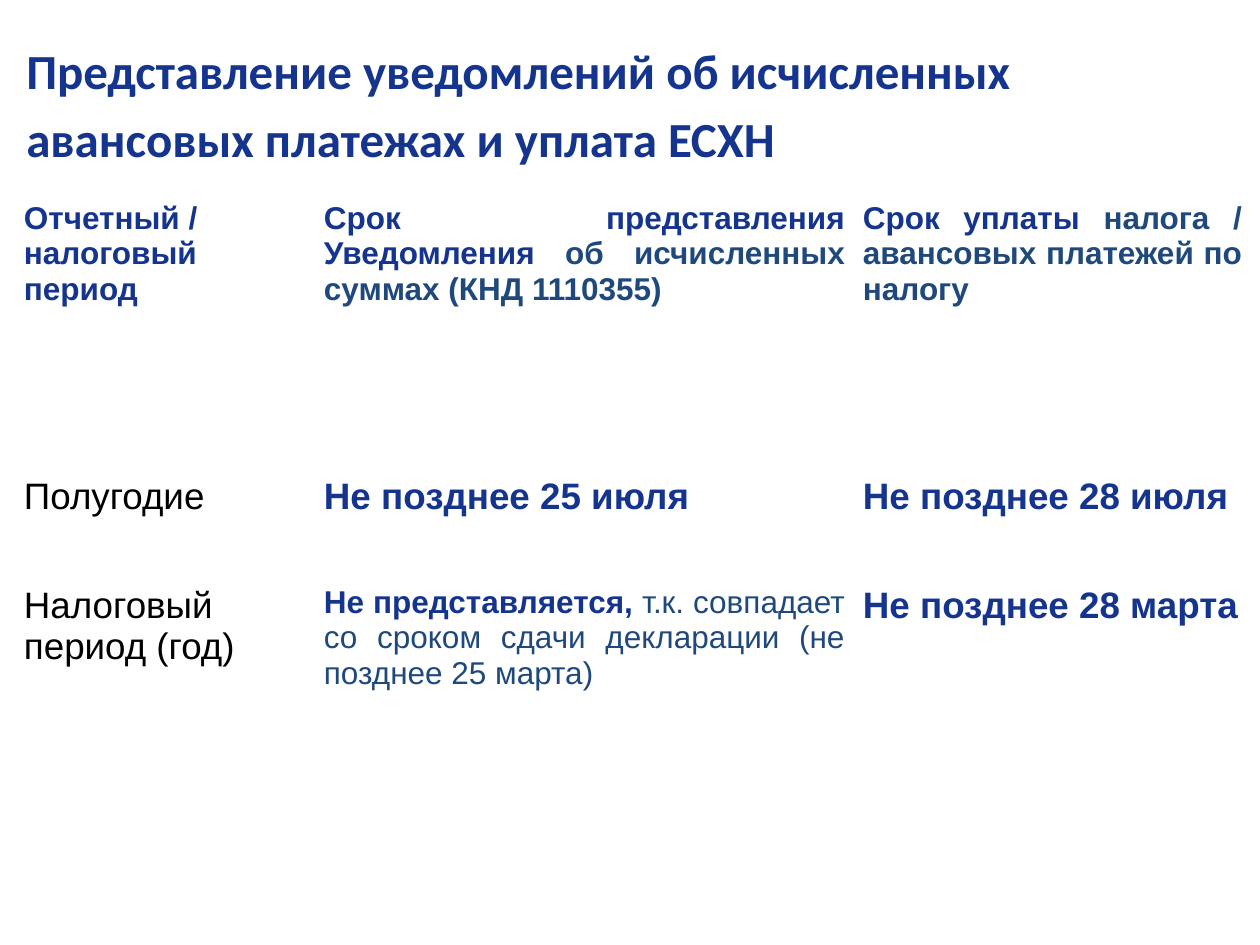
from lxml import etree
from pptx import Presentation
from pptx import util as u
from pptx.dml.color import RGBColor
from pptx.enum import text
from pptx.oxml import ns

BLUE, STEEL, BLACK, WHITE = "14348E", "1F497D", "000000", "FFFFFF"
LEFT, JUSTIFY = text.PP_ALIGN.LEFT, text.PP_ALIGN.JUSTIFY
TOP, MIDDLE = text.MSO_ANCHOR.TOP, text.MSO_ANCHOR.MIDDLE

TITLE = "Представление уведомлений об исчисленных авансовых платежах и уплата ЕСХН"
TITLE_BOX = (14, 26, 1235, 149)
TABLE_ORIGIN = (15, 195)
COLUMN_WIDTHS = (300, 539, 397)
ALIGNMENTS = (LEFT, JUSTIFY, JUSTIFY)
ROWS = [
    (220, TOP, [
        [("Отчетный / налоговый период", 18, BLUE, True)],
        [("Срок представления Уведомления ", 18, BLUE, True),
         ("об исчисленных суммах (КНД 1110355)", 18, STEEL, True)],
        [("Срок уплаты", 18, BLUE, True),
         (" налога / авансовых платежей по налогу", 18, STEEL, True)],
    ]),
    (164, MIDDLE, [
        [("Полугодие", 21, BLACK, False)],
        [("Не позднее 25 июля", 21, BLUE, True)],
        [("Не позднее 28 июля", 21, BLUE, True)],
    ]),
    (220, TOP, [
        [("Налоговый период (год)", 21, BLACK, False)],
        [("Не представляется, ", 18, BLUE, True),
         ("т.к. совпадает со сроком сдачи декларации (не позднее 25 марта)", 18, STEEL, False)],
        [("Не позднее 28 марта", 21, BLUE, True)],
    ]),
]


def px(length):
    return u.Emu(round(length * 914400 / 126))


def color(value):
    return RGBColor.from_string(value)


def add_run(paragraph, content, size, value, bold, font_name):
    run = paragraph.add_run()
    run.text = content
    font = run.font
    font.name, font.size, font.bold = font_name, u.Pt(size), bold
    font.color.rgb = color(value)


def set_borders(cell, top, bottom):
    properties = cell._tc.get_or_add_tcPr()
    for index, (side, width) in enumerate((("L", 1), ("R", 1), ("T", top), ("B", bottom))):
        line = etree.Element(ns.qn(f"a:ln{side}"), w=str(u.Pt(width)))
        fill = etree.SubElement(line, ns.qn("a:solidFill"))
        etree.SubElement(fill, ns.qn("a:srgbClr"), val=WHITE)
        properties.insert(index, line)


def add_title(slide):
    frame = slide.shapes.add_textbox(*map(px, TITLE_BOX)).text_frame
    frame.word_wrap = True
    frame.auto_size = text.MSO_AUTO_SIZE.SHAPE_TO_FIT_TEXT
    paragraph = frame.paragraphs[0]
    paragraph.line_spacing = 1.15
    paragraph.space_after = u.Pt(10)
    add_run(paragraph, TITLE, 28, BLUE, True, "Calibri")


def fill_cell(cell, runs, anchor, alignment):
    cell.fill.background()
    cell.margin_left = cell.margin_right = px(9)
    cell.margin_top = cell.margin_bottom = px(6)
    cell.vertical_anchor = anchor
    paragraph = cell.text_frame.paragraphs[0]
    paragraph.alignment = alignment
    for run in runs:
        add_run(paragraph, *run, "Arial")


def add_deadlines(slide):
    size = (sum(COLUMN_WIDTHS), sum(height for height, _, _ in ROWS))
    table = slide.shapes.add_table(
        len(ROWS), len(COLUMN_WIDTHS), *map(px, TABLE_ORIGIN + size)).table
    table.first_row = table.horz_banding = False
    for column, width in zip(table.columns, COLUMN_WIDTHS):
        column.width = px(width)
    for row_index, (height, anchor, cells) in enumerate(ROWS):
        table.rows[row_index].height = px(height)
        top = 3 if row_index == 1 else 1
        bottom = 3 if row_index == 0 else 1
        for column_index, runs in enumerate(cells):
            cell = table.cell(row_index, column_index)
            fill_cell(cell, runs, anchor, ALIGNMENTS[column_index])
            set_borders(cell, top, bottom)


def main():
    presentation = Presentation()
    presentation.slide_width, presentation.slide_height = px(1260), px(945)
    slide = presentation.slides.add_slide(presentation.slide_layouts[6])
    add_title(slide)
    add_deadlines(slide)
    presentation.save("out.pptx")


if __name__ == "__main__":
    main()
